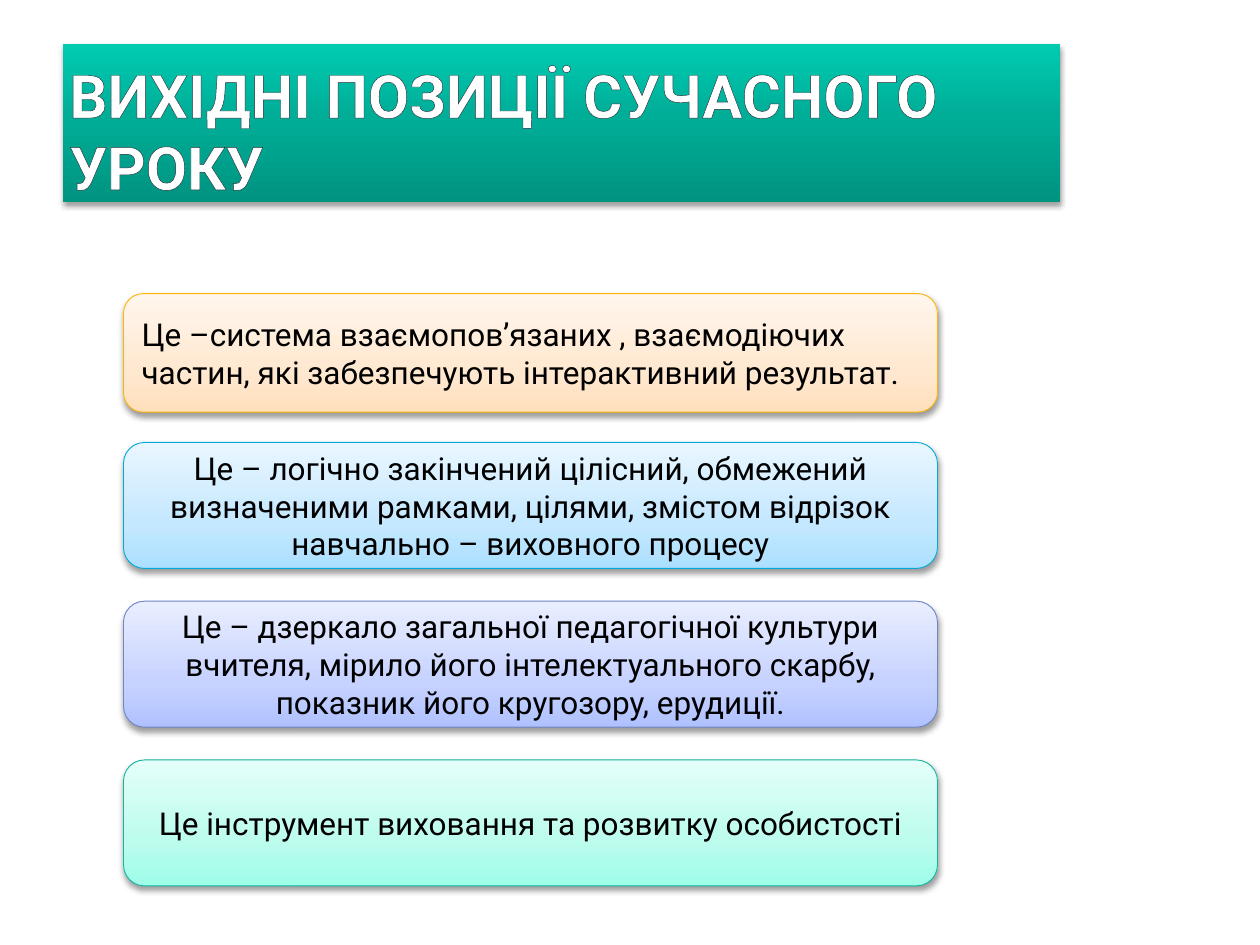
from lxml import etree
from pptx import Presentation
from pptx import util as u
from pptx.dml.color import RGBColor
from pptx.enum import shapes, text
from pptx.oxml.ns import qn

COLOURS = {
    "white": "FFFFFF", "black": "000000", "outline": "252D39",
    "banner": ("009481", "00AE98", "00CBB1"),
    "orange": ("FFDFBC", "FFE8D0", "FFF6ED"), "orange line": "FEB604",
    "blue": ("ACDFFF", "C4E8FF", "E9F6FF"), "blue line": "00A9D7",
    "violet": ("B0C1FF", "C6D2FF", "E9EEFF"), "violet line": "6E86C6",
    "mint": ("9DFDE8", "BBFCED", "E4FFF9"), "mint line": "16B39E",
}
LEFT, CENTRE = text.PP_ALIGN.LEFT, text.PP_ALIGN.CENTER
CARD_LEFT, CARD_WIDTH, CARD_HEIGHT = 2.49, 16.41, 2.54
CARD_TOP, CARD_STEP = 8.92, 3.2


def add_colour(parent, name, alpha=None):
    colour = etree.SubElement(parent, qn("a:srgbClr"), val=COLOURS.get(name, name))
    if alpha is not None:
        etree.SubElement(colour, qn("a:alpha"), val=str(alpha * 1000))


def write_text(shape, content, size, colour, align=LEFT, bold=False, outline=None):
    paragraph = shape.text_frame.paragraphs[0]
    paragraph.alignment = align
    run = paragraph.add_run()
    run.text = content
    font = run.font
    font.name, font.size, font.bold = "Roboto", u.Pt(size), bold
    font.color.rgb = RGBColor.from_string(COLOURS[colour])
    if outline:
        line = etree.Element(qn("a:ln"), w=str(u.Pt(0.04)))
        add_colour(etree.SubElement(line, qn("a:solidFill")), outline)
        font._element.insert(0, line)


class SlideBuilder:
    def __init__(self, slide):
        self.slide = slide

    def panel(self, kind, left, top, width, height, fill, middle_stop, blur, line=None):
        """Add a shape with a bottom-to-top gradient and a soft shadow below."""
        shape = self.slide.shapes.add_shape(
            kind, u.Cm(left), u.Cm(top), u.Cm(width), u.Cm(height))
        shape.fill.gradient()
        shape.fill.gradient_angle = 90
        properties = shape._element.spPr
        stops = properties.find(".//" + qn("a:gsLst"))
        for stop in list(stops):
            stops.remove(stop)
        for position, colour in zip((0, middle_stop, 100), COLOURS[fill]):
            stop = etree.SubElement(stops, qn("a:gs"), pos=str(position * 1000))
            add_colour(stop, colour)
        if line:
            shape.line.color.rgb = RGBColor.from_string(COLOURS[line])
            shape.line.width = u.Pt(0.5)
        else:
            shape.line.fill.background()
        shape.shadow.inherit = False
        shadow = etree.SubElement(
            properties.find(qn("a:effectLst")), qn("a:outerShdw"),
            blurRad=str(u.Pt(blur)), dist=str(u.Pt(2)), dir="5400000", rotWithShape="0")
        add_colour(shadow, "black", alpha=38)
        shape.text_frame.word_wrap = True
        return shape

    def title(self, content):
        shape = self.panel(shapes.MSO_SHAPE.RECTANGLE, 1.27, 0.89, 20.11, 3.18,
                           "banner", 55, 3.1)
        frame = shape.text_frame
        frame.vertical_anchor = text.MSO_ANCHOR.BOTTOM
        frame.margin_left = frame.margin_right = u.Cm(0.13)
        frame.margin_top = frame.margin_bottom = 0
        write_text(shape, content, 34.2, "white", bold=True, outline="outline")

    def card(self, content, top, height, colour, align):
        shape = self.panel(shapes.MSO_SHAPE.ROUNDED_RECTANGLE, CARD_LEFT, top, CARD_WIDTH,
                           height, colour, 35, 3.5, line=colour + " line")
        shape.text_frame.vertical_anchor = text.MSO_ANCHOR.MIDDLE
        write_text(shape, content, 18, "black", align=align)


def main():
    presentation = Presentation()
    presentation.slide_width, presentation.slide_height = u.Cm(25.4), u.Cm(19.05)
    builder = SlideBuilder(presentation.slides.add_slide(presentation.slide_layouts[6]))
    builder.title("ВИХІДНІ ПОЗИЦІЇ СУЧАСНОГО УРОКУ")
    builder.card("Це –система взаємопов’язаних , взаємодіючих частин, "
                 "які забезпечують інтерактивний результат.", 5.92, 2.39, "orange", LEFT)
    centred_cards = (
        ("blue", "Це – логічно закінчений цілісний, обмежений визначеними рамками, "
                 "цілями, змістом відрізок навчально – виховного процесу"),
        ("violet", "Це – дзеркало загальної педагогічної культури вчителя, мірило його "
                   "інтелектуального скарбу, показник його кругозору, ерудиції."),
        ("mint", "Це інструмент виховання та розвитку особистості"),
    )
    for index, (colour, content) in enumerate(centred_cards):
        builder.card(content, CARD_TOP + index * CARD_STEP, CARD_HEIGHT, colour, CENTRE)
    presentation.save("out.pptx")


if __name__ == "__main__":
    main()
